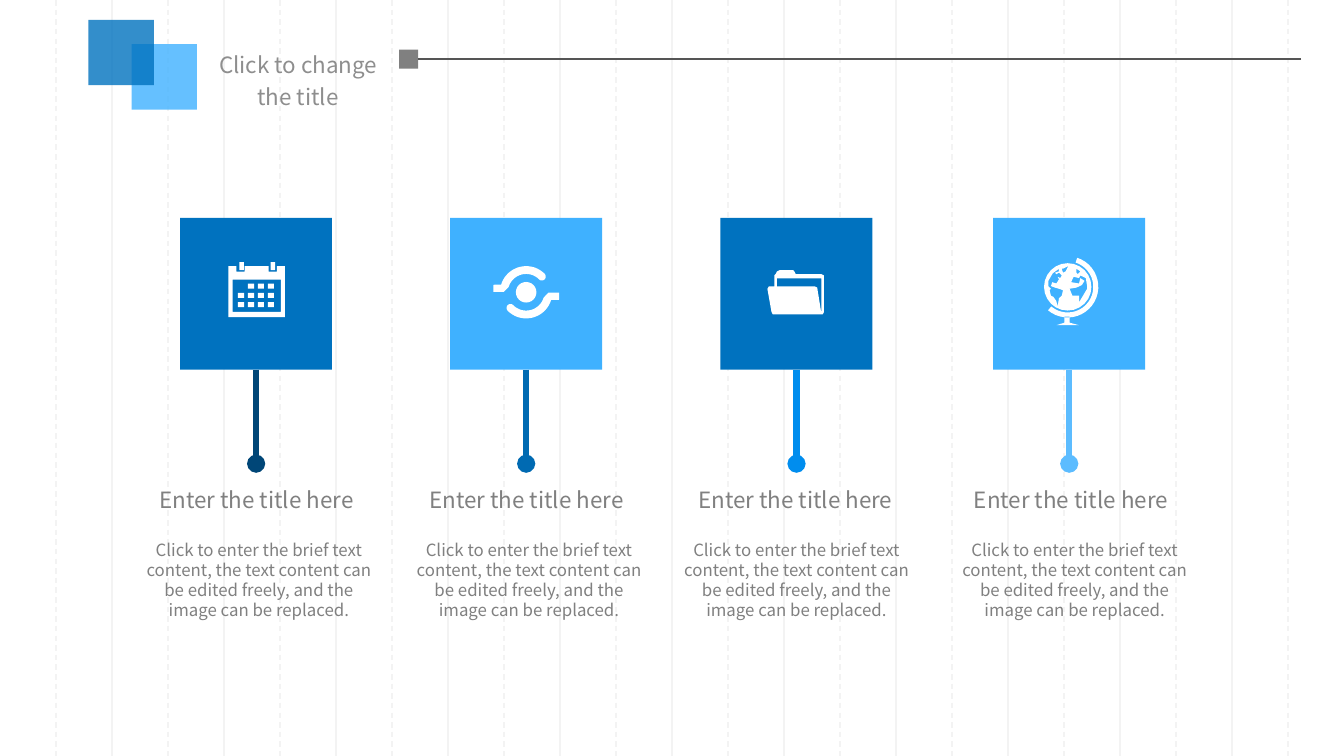
"""Build a four-step slide with icon tiles, stems and captions on a ruled background."""
from math import cos, radians, sin

from lxml.etree import SubElement
from pptx import Presentation
from pptx.dml.color import RGBColor
from pptx.enum.dml import MSO_LINE
from pptx.enum.shapes import MSO_CONNECTOR, MSO_SHAPE
from pptx.enum.text import MSO_AUTO_SIZE, PP_ALIGN
from pptx.oxml.ns import qn
from pptx.util import Pt

WHITE = RGBColor(0xFF, 0xFF, 0xFF)
GRID = RGBColor(0xF3, 0xF3, 0xF3)
RULE = RGBColor(0x55, 0x55, 0x55)
GRAY = RGBColor(0x80, 0x80, 0x80)
TITLE_GRAY = RGBColor(0x8E, 0x8E, 0x8E)
BLUE = RGBColor(0x00, 0x72, 0xBF)
SKY = RGBColor(0x3F, 0xB1, 0xFF)
STEMS = [RGBColor(0x00, 0x46, 0x77), RGBColor(0x00, 0x6A, 0xB2),
         RGBColor(0x00, 0x8D, 0xEE), RGBColor(0x5C, 0xBC, 0xFF)]
FONT = "Noto Sans CJK SC"
BODY = ("Click to enter the brief text content, the text content can be "
        "edited freely, and the image can be replaced.")
TOP, SIDE = 116.7, 81.4


def paint(sp, color):
    sp.shadow.inherit = False
    sp.fill.solid()
    sp.fill.fore_color.rgb = color
    sp.line.fill.background()
    return sp


def arc(cx, cy, radius, start, end, steps=24):
    angles = [radians(start + (end - start) * i / steps) for i in range(steps + 1)]
    return [(cx + radius * cos(a), cy + radius * sin(a)) for a in angles]


prs = Presentation()
prs.slide_width, prs.slide_height = Pt(720), Pt(405)
s = prs.slides.add_slide(prs.slide_layouts[6])
lines = []

for i in range(1, 24):
    line = s.shapes.add_connector(MSO_CONNECTOR.STRAIGHT, Pt(30 * i), 0, Pt(30 * i), Pt(405))
    line.line.color.rgb = GRID
    line.line.width = Pt(0.75)
    if i % 2:
        line.line.dash_style = MSO_LINE.DASH
    lines.append(line)

calendar = [
    [(56.1, 25.9), (51.8, 25.9), (51.8, 28.8), (47.5, 28.8), (47.5, 25.9), (34.5, 25.9),
     (34.5, 28.8), (30.2, 28.8), (30.2, 25.9), (25.9, 25.9), (25.9, 53.2), (56.1, 53.2)],
    [(54, 50.4), (28.1, 50.4), (28.1, 33.1), (54, 33.1)],
]

hook = (arc(0, 0, 14, 197, 315) + arc(8.4, -8.4, 2.1, 315, 495)
        + arc(0, 0, 9.8, 315, 197) + [(-12, -0.2), (-17.6, -0.2), (-17.6, -4)])
swirl = [[(40.7 + k * x, 39.9 + k * y) for x, y in hook] for k in (1, -1)]
swirl.append(arc(40.7, 39.9, 5.5, 0, 360))

folder = [
    [(55.4, 50.4), (55.4, 30.9), (54, 30.2), (40.3, 30.2), (39.6, 28.8), (38.9, 28),
     (31.7, 28), (30.2, 28.8), (29.5, 30.2), (28.8, 30.9), (28.8, 36.7), (25.9, 36.7),
     (25.1, 38.1), (27.3, 50.4), (28, 51.8), (54.7, 51.8)],
    [(54, 38.1), (54, 51.1), (51.8, 37.4), (50.4, 36.7), (30.2, 36.7), (30.2, 32.4), (54, 32.4)],
]

globe = [
    arc(0, 0, 12.7, 0, 360),
    arc(0, 0, 16.4, -72, 130) + arc(0, 0, 13.7, 130, -72),
    [(-1.8, 16), (1.1, 16), (1.1, 19.2), (6, 20.5), (-6, 20.5), (-1.8, 19.2)],
    [(1, 1), (4.7, 0.4), (7.6, -1), (9, -3.2), (6.8, -4.7), (6.1, -1.8), (1.8, -2.5),
     (3.2, -5.4), (6.1, -4.7), (6.8, -6.1), (9.7, -4.7), (10.4, -0.4), (10.4, 1),
     (6.1, 8.3), (6.1, 4.7), (2.5, 4.7)],
    [(4.7, -9.7), (6.8, -8.3), (5.4, -6.8), (4.7, -7.6)],
    [(-2.5, -9.7), (0.4, -11.2), (-0.4, -9.7), (-1.1, -8.3), (-2.5, -7.6), (-3.2, -9.7)],
    [(-9, 4.7), (-9.7, 1.8), (-9, 1), (-10.4, -0.4), (-10.4, -3.2), (-8, -7.3), (-4.7, -9.7),
     (-4.7, -8.3), (-6.8, -7.6), (-6.1, -6.8), (-4.7, -7.6), (-3.2, -6.1), (-4, -4.7),
     (-5.4, -5.4), (-4.7, -4), (-6.1, -1.8), (-8.3, -2.5), (-9, -0.4), (-6.8, 0.4), (-4.7, 1),
     (-2.5, 1.8), (-3.2, 4.7), (-4.7, 6.1), (-5.4, 10.4), (-6.1, 7.6), (-7.6, 5.4)],
]
globe = [[(39.9 + x, 37 + y) for x, y in contour] for contour in globe]

steps = [(96.5, 76.3, 68.4, BLUE, calendar), (241.2, 221, 213.1, SKY, swirl),
         (386, 365, 356.4, BLUE, folder), (532.1, 512.6, 505.4, SKY, globe)]
texts = [(113, 24.5, 93.6, 19.4, "Click to change the title", 12, TITLE_GRAY)]

for (left, title_left, body_left, color, icon), stem_color in zip(steps, STEMS):
    tile = paint(s.shapes.add_shape(MSO_SHAPE.RECTANGLE, Pt(left), Pt(TOP), Pt(SIDE), Pt(SIDE)), color)
    x = Pt(left + SIDE / 2)
    stem = s.shapes.add_connector(MSO_CONNECTOR.STRAIGHT, x, Pt(TOP + SIDE), x, Pt(248.4))
    stem.begin_connect(tile, 2)
    stem.line.color.rgb = stem_color
    stem.line.width = Pt(3.25)
    SubElement(stem.line._get_or_add_ln(), qn("a:tailEnd"), type="oval")
    lines.append(stem)

    contours = [[(Pt(left + px), Pt(TOP + py)) for px, py in contour] for contour in icon]
    fb = s.shapes.build_freeform(*contours[0][0], scale=1.0)
    for contour in contours:
        fb.move_to(*contour[0])
        fb.add_line_segments(contour[1:], close=True)
    paint(fb.convert_to_shape(), WHITE)

    texts.append((title_left, 257, 122.4, 21.6, "Enter the title here", 12, GRAY))
    texts.append((body_left, 285.4, 140.4, 50.1, BODY, 9, GRAY))

marks = [(127.5 + 5.35 * col, 151.9 + 4.95 * row, 3.3, 2.8)
         for row in range(3) for col in range(4) if row or col]
marks += [(128.2, 140.4, 2.5, 4.3), (145, 140.4, 2.5, 4.3)]
for x, y, w, h in marks:
    paint(s.shapes.add_shape(MSO_SHAPE.RECTANGLE, Pt(x), Pt(y), Pt(w), Pt(h)), WHITE)

knob = paint(s.shapes.add_shape(MSO_SHAPE.RECTANGLE, Pt(213.8), Pt(26.6), Pt(10.2), Pt(10.2)), GRAY)
rule = s.shapes.add_connector(MSO_CONNECTOR.STRAIGHT, Pt(697), Pt(31.7), Pt(224), Pt(31.7))
rule.end_connect(knob, 3)
rule.line.color.rgb = RULE
rule.line.width = Pt(0.75)
lines.append(rule)

for line in lines:
    SubElement(line._element.spPr, qn("a:effectLst"))

for x, y, w, h, text, size, color in texts:
    tf = s.shapes.add_textbox(Pt(x), Pt(y), Pt(w), Pt(h)).text_frame
    tf.text = text
    tf.word_wrap = color == TITLE_GRAY or size == 9
    p = tf.paragraphs[0]
    p.alignment = PP_ALIGN.CENTER
    if color == TITLE_GRAY:
        tf.margin_left = tf.margin_right = tf.margin_top = tf.margin_bottom = 0
        p.line_spacing = 1.2
    else:
        tf.auto_size = MSO_AUTO_SIZE.SHAPE_TO_FIT_TEXT
    r = p.runs[0]
    r.font.name = FONT
    r.font.size = Pt(size)
    r.font.color.rgb = color

for x, y, color in [(70.5, 23.7, SKY), (47.4, 10.7, BLUE)]:
    sp = paint(s.shapes.add_shape(MSO_SHAPE.RECTANGLE, Pt(x), Pt(y), Pt(35), Pt(35)), color)
    srgb = sp._element.spPr.find(qn("a:solidFill")).find(qn("a:srgbClr"))
    SubElement(srgb, qn("a:alpha"), val="80000")

prs.save("out.pptx")
